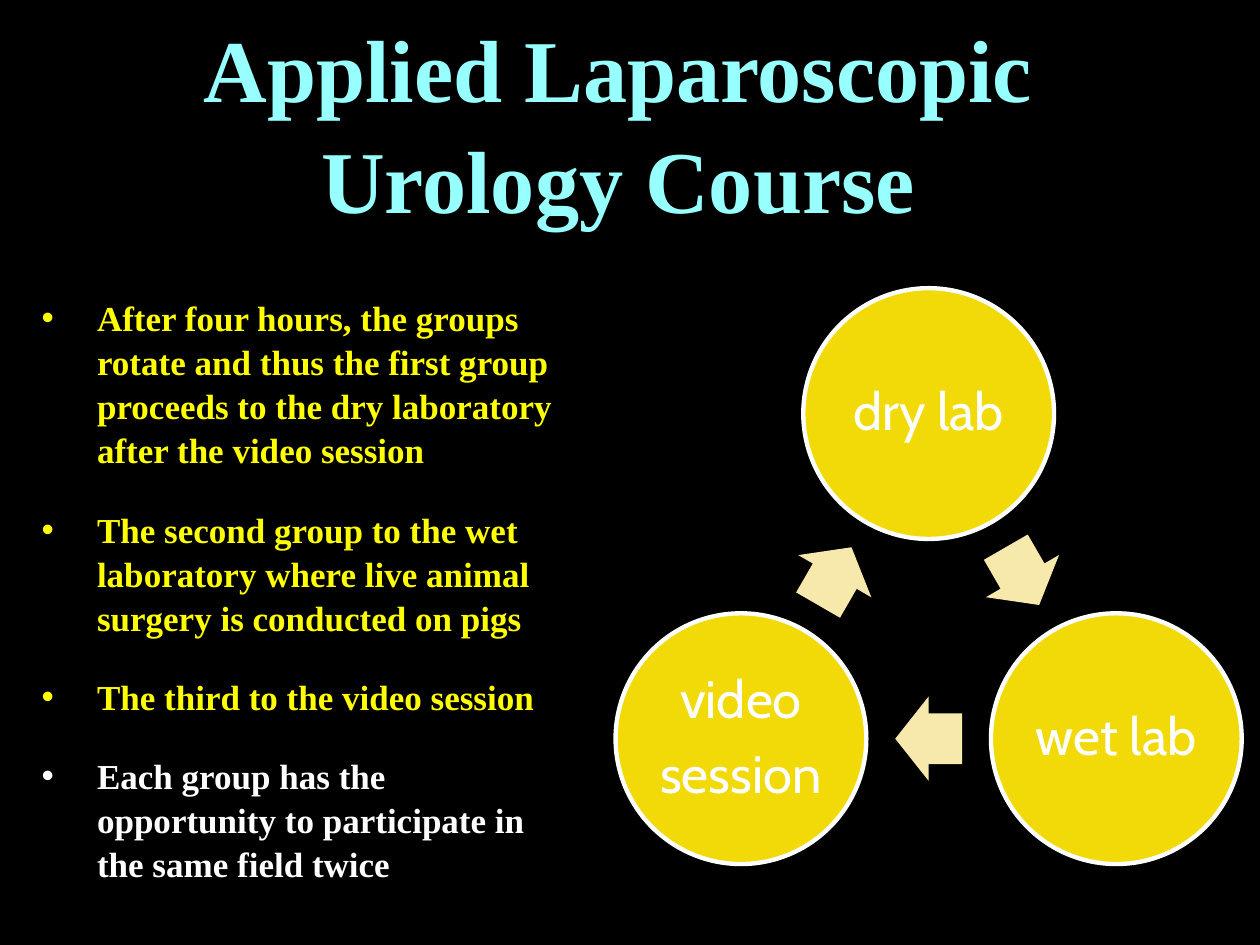
from math import cos, radians, sin

from pptx import Presentation
from pptx.dml.color import RGBColor
from pptx.enum.shapes import MSO_SHAPE as SHAPE
from pptx.enum.text import MSO_ANCHOR as ANCHOR, MSO_AUTO_SIZE as AUTO, PP_ALIGN as ALIGN
from pptx.util import Inches, Pt

prs = Presentation()
prs.slide_width, prs.slide_height = Inches(10), Inches(7.5)
W, H = prs.slide_width, prs.slide_height


def rgb(code):
    return RGBColor.from_string(code)


def style(p, name, size, color, bold=False):
    p.font.name, p.font.size, p.font.bold = name, Pt(size), bold
    p.font.color.rgb = rgb(color)


s = prs.slides.add_slide(prs.slide_layouts[1])
s.background.fill.solid()
s.background.fill.fore_color.rgb = rgb("000000")
title, body = s.shapes.title, s.placeholders[1]

# Title and body positions, in percent of the slide
for sp, (x, y, w, h) in ((title, (3.1, 4.4, 91.9, 16.7)), (body, (2.3, 30.5, 44.2, 57.6))):
    sp.left, sp.width = int(W * x / 100), int(W * w / 100)
    sp.top, sp.height = int(H * y / 100), int(H * h / 100)
    sp.text_frame.auto_size = AUTO.NONE
    sp.text_frame.word_wrap = True

# Title
title.text_frame.text = "Applied Laparoscopic Urology Course"
title.text_frame.vertical_anchor = ANCHOR.MIDDLE
p = title.text_frame.paragraphs[0]
p.alignment, p.line_spacing = ALIGN.CENTER, 1.05
style(p, "Times New Roman", 50.4, "98FFFF", True)

# Bulleted list
items = [
    ("After four hours, the groups rotate and thus the first group proceeds "
     "to the dry laboratory after the video session", "FFFF00"),
    ("The second group to the wet laboratory where live animal surgery "
     "is conducted on pigs", "FFFF00"),
    ("The third to the video session", "FFFF00"),
    ("Each group has the opportunity to participate in the same field twice", "FFFFFF"),
]
tf = body.text_frame
for i, (text, color) in enumerate(items):
    p = tf.add_paragraph() if i else tf.paragraphs[0]
    p.text = text
    pPr = p._p.get_or_add_pPr()
    pPr.set("marL", str(Inches(0.44)))
    pPr.set("indent", str(-Inches(0.44)))
    p.space_before = Pt(20 if i else 0)
    p.line_spacing = 1.05
    style(p, "Times New Roman", 20, color, True)

# Cycle: circles on a ring, an arrow halfway between each pair
labels = ["dry lab", "wet lab", "video\nsession"]
ring, size = W * 0.172, int(W * 0.199)
arrow_w, arrow_h = int(W * 0.053), int(W * 0.067)
angles = [radians(120 * i - 90) for i in range(len(labels))]
centers = [(W * 0.737 + ring * cos(a), H * 0.667 + ring * sin(a)) for a in angles]

for i, (label, (x, y)) in enumerate(zip(labels, centers)):
    circle = s.shapes.add_shape(SHAPE.OVAL, int(x - size / 2), int(y - size / 2), size, size)
    circle.shadow.inherit = False
    circle.fill.solid()
    circle.fill.fore_color.rgb = rgb("F2D908")
    circle.line.color.rgb = rgb("FFFFFF")
    circle.line.width = Pt(2.5)
    tf = circle.text_frame
    tf.text, tf.word_wrap, tf.vertical_anchor = label, True, ANCHOR.MIDDLE
    tf.margin_left = tf.margin_right = tf.margin_top = tf.margin_bottom = Inches(0.04)
    for p in tf.paragraphs:
        p.alignment, p.line_spacing, p.space_after = ALIGN.CENTER, 0.9, Pt(10.5)
        style(p, "Cabin", 30, "FFFFFF")

    next_x, next_y = centers[(i + 1) % len(centers)]
    arrow = s.shapes.add_shape(
        SHAPE.RIGHT_ARROW, int((x + next_x - arrow_w) / 2), int((y + next_y - arrow_h) / 2),
        arrow_w, arrow_h)
    arrow.rotation = 60 + 120 * i
    arrow.adjustments[0], arrow.adjustments[1] = 0.6, 0.5
    arrow.shadow.inherit = False
    arrow.fill.solid()
    arrow.fill.fore_color.rgb = rgb("F7E9AB")
    arrow.line.fill.background()

prs.save("out.pptx")
